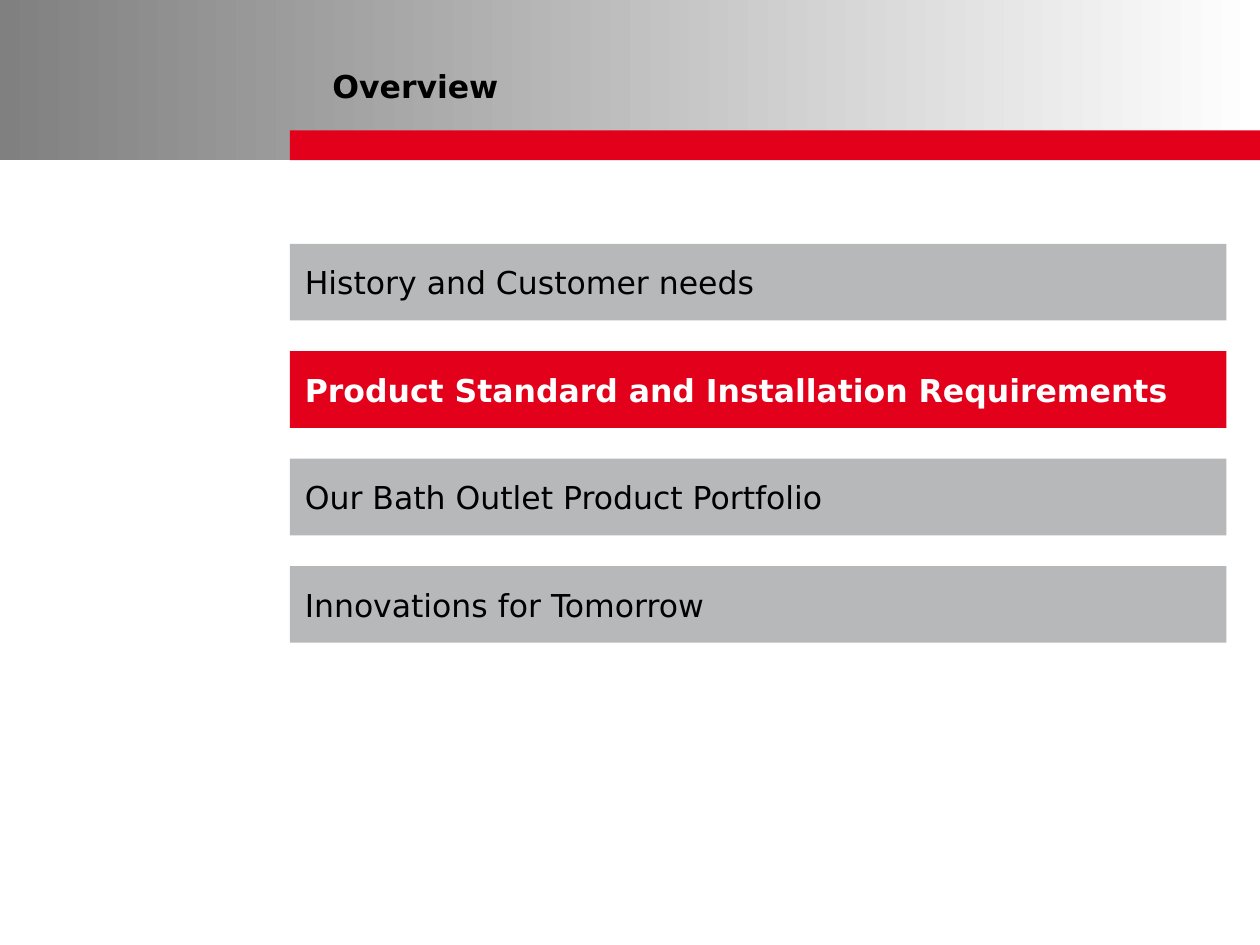
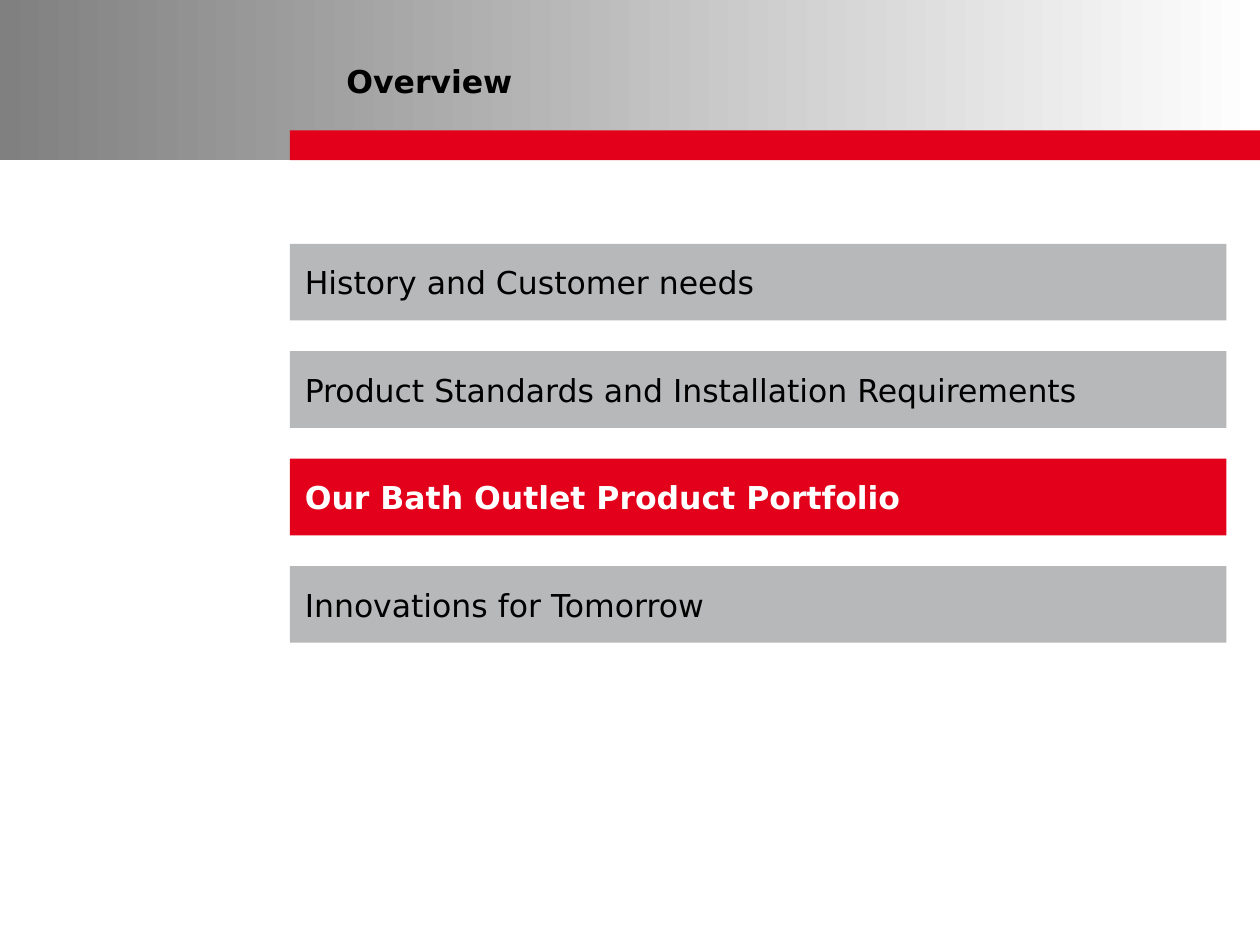
"""Build two overview slides that each highlight one agenda topic."""
import pptx
import pptx.dml.color
import pptx.enum.shapes
import pptx.enum.text
import pptx.util

Pt = pptx.util.Pt

PORTFOLIO = "Our Bath Outlet Product Portfolio"
OVERVIEWS = [
    {
        "title": "Overview",
        "title_place": (190, 36, 453.6, 23.8),
        "topics": [
            "History and Customer needs",
            "Product Standard and Installation Requirements",
            PORTFOLIO,
            "Innovations for Tomorrow",
        ],
        "current": 1,
    },
    {
        "title": "Overview",
        "title_place": (198, 35.3, 453.6, 21.6),
        "topics": [
            "History and Customer needs",
            "Product Standards and Installation Requirements",
            PORTFOLIO,
            "Innovations for Tomorrow",
        ],
        "current": 2,
    },
]

FONT = "DejaVu Sans"
RED, GREY, DARK_GREY = "E2001A", "B7B8B9", "808080"
BLACK, WHITE = "000000", "FFFFFF"
PAGE_WIDTH, PAGE_HEIGHT = 720, 540
HEADER_HEIGHT, RED_BAND_HEIGHT = 91.5, 17
CONTENT_LEFT = 165.6
BAR_TOP, BAR_WIDTH, BAR_HEIGHT, BAR_PITCH = 139.3, 535.2, 43.8, 61.4


def color(hex_value):
    return pptx.dml.color.RGBColor.from_string(hex_value)


def add_bar(page, place, fill=None):
    bar = page.shapes.add_shape(
        pptx.enum.shapes.MSO_SHAPE.RECTANGLE, *map(Pt, place)
    )
    bar.shadow.inherit = False
    bar.line.fill.background()
    if fill:
        bar.fill.solid()
        bar.fill.fore_color.rgb = color(fill)
    return bar


def write(box, text, ink=BLACK, bold=False, indent=0, anchor="MIDDLE", spacing=None):
    frame = box.text_frame
    frame.word_wrap = True
    frame.margin_left = Pt(indent)
    frame.margin_top = frame.margin_right = frame.margin_bottom = 0
    frame.vertical_anchor = pptx.enum.text.MSO_ANCHOR[anchor]
    para = frame.paragraphs[0]
    para.alignment = pptx.enum.text.PP_ALIGN.LEFT
    para.line_spacing = spacing
    span = para.add_run()
    span.text = text
    span.font.name = FONT
    span.font.size = Pt(18)
    span.font.bold = bold
    span.font.color.rgb = color(ink)


def add_header(page, title, place):
    fade = add_bar(page, (0, 0, PAGE_WIDTH, HEADER_HEIGHT)).fill
    fade.gradient()
    fade.gradient_angle = 0
    for stop, shade in zip(fade.gradient_stops, (DARK_GREY, WHITE)):
        stop.color.rgb = color(shade)
    for stop, position in zip(fade.gradient_stops, (0, 1)):
        stop.position = position
    band_top = HEADER_HEIGHT - RED_BAND_HEIGHT
    band_width = PAGE_WIDTH - CONTENT_LEFT
    add_bar(page, (CONTENT_LEFT, band_top, band_width, RED_BAND_HEIGHT), RED)
    box = page.shapes.add_textbox(*map(Pt, place))
    write(box, title, bold=True, anchor="BOTTOM", spacing=1.1)


def add_topics(page, topics, current):
    for index, topic in enumerate(topics):
        active = index == current
        top = BAR_TOP + index * BAR_PITCH
        place = (CONTENT_LEFT, top, BAR_WIDTH, BAR_HEIGHT)
        bar = add_bar(page, place, RED if active else GREY)
        write(bar, topic, ink=WHITE if active else BLACK, bold=active, indent=8.6)


def main():
    deck = pptx.Presentation()
    deck.slide_width, deck.slide_height = Pt(PAGE_WIDTH), Pt(PAGE_HEIGHT)
    for overview in OVERVIEWS:
        page = deck.slides.add_slide(deck.slide_layouts[6])
        add_header(page, overview["title"], overview["title_place"])
        add_topics(page, overview["topics"], overview["current"])
    deck.save("out.pptx")


if __name__ == "__main__":
    main()
